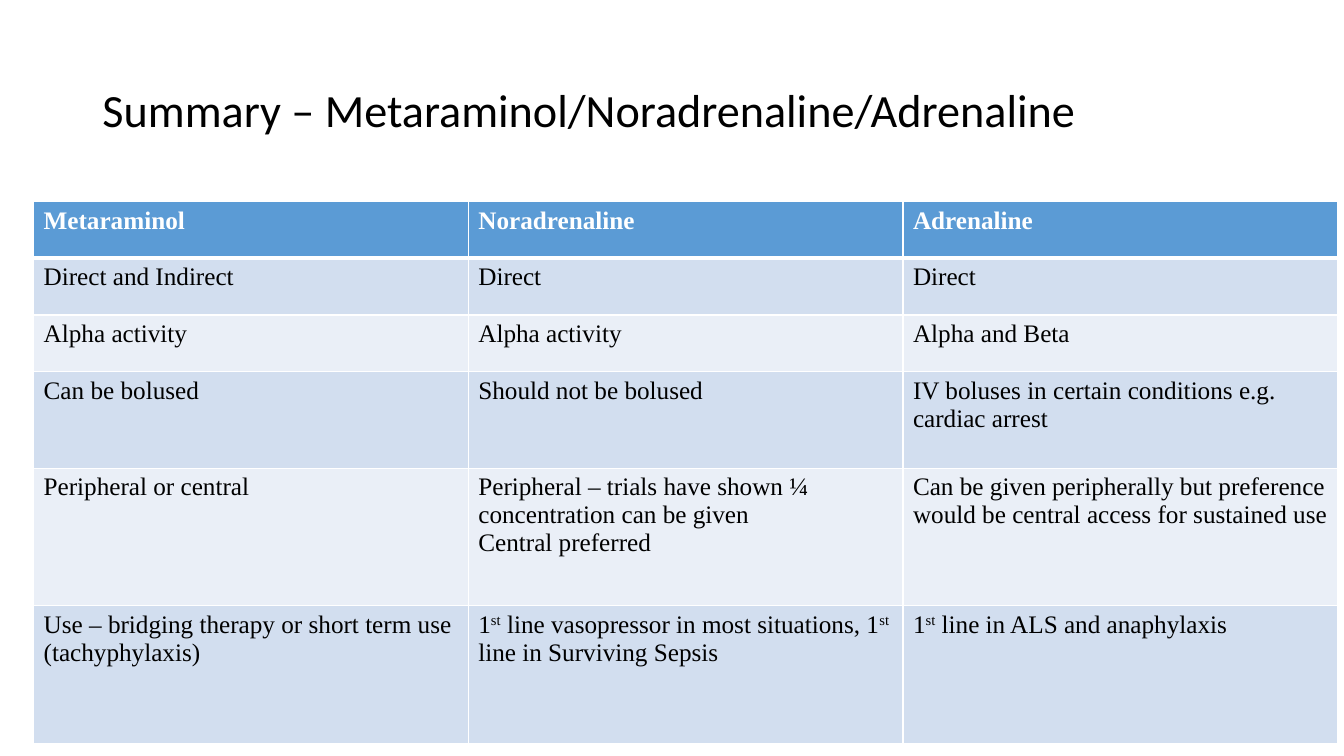
from typing import NamedTuple

from lxml import etree
from pptx import Presentation, util as u
from pptx.dml.color import RGBColor
from pptx.enum import text
from pptx.oxml import ns

PX = 9525  # EMU per px, 96 px to the inch
HUES = {"head": "5B9BD5", "dark": "D2DEEF", "light": "EAEFF7",
        "white": "FFFFFF", "black": "000000"}


class Row(NamedTuple):
    high: int
    cells: tuple[str, str, str]


# Carets enclose superscript, line breaks part paragraphs
ROWS = [
    Row(54, ("Metaraminol", "Noradrenaline", "Adrenaline")),
    Row(54, ("Direct and Indirect", "Direct", "Direct")),
    Row(54, ("Alpha activity", "Alpha activity", "Alpha and Beta")),
    Row(92, ("Can be bolused", "Should not be bolused",
             "IV boluses in certain conditions e.g. cardiac arrest")),
    Row(131, ("Peripheral or central",
              "Peripheral – trials have shown ¼ concentration can be given\n"
              "Central preferred",
              "Can be given peripherally but preference would be central "
              "access for sustained use")),
    Row(131, ("Use – bridging therapy or short term use (tachyphylaxis)",
              "1^st^ line vasopressor in most situations, 1^st^ line in "
              "Surviving Sepsis",
              "1^st^ line in ALS and anaphylaxis")),
]
COL = 414


def px(n: int) -> u.Emu:
    return u.Emu(n * PX)


def style(font, face: str, size: int, hue: str, bold: bool = False) -> None:
    font.name, font.size, font.bold = face, u.Pt(size), bold
    font.color.rgb = RGBColor.from_string(HUES[hue])


def edge(cell, side: str, wide: int) -> None:
    line = etree.SubElement(cell._tc.get_or_add_tcPr(), ns.qn(f"a:ln{side}"),
                            w=str(u.Pt(wide)))
    fill = etree.SubElement(line, ns.qn("a:solidFill"))
    etree.SubElement(fill, ns.qn("a:srgbClr"), val=HUES["white"])


def write(cell, words: str, head: bool) -> None:
    frame = cell.text_frame
    for i, line in enumerate(words.split("\n")):
        para = frame.add_paragraph() if i else frame.paragraphs[0]
        for j, part in enumerate(line.split("^")):
            run = para.add_run()
            run.text = part
            style(run.font, "Times New Roman", 18,
                  "white" if head else "black", head)
            if j % 2:
                run.font._element.set("baseline", "30000")


def draw(slide, rows: list[Row]) -> None:
    frame = slide.shapes.add_table(
        len(rows), 3, px(32), px(192), px(3 * COL),
        px(sum(row.high for row in rows)))
    grid = frame.table
    for col in grid.columns:
        col.width = px(COL)
    for r, row in enumerate(rows):
        grid.rows[r].height = px(row.high)
        hue = "head" if r == 0 else "dark" if r % 2 else "light"
        for c, words in enumerate(row.cells):
            cell = grid.cell(r, c)
            write(cell, words, r == 0)
            # A thick rule runs below the header
            for side in "LRTB":
                thick = (r, side) in ((0, "B"), (1, "T"))
                edge(cell, side, 3 if thick else 1)
            cell.fill.solid()
            cell.fill.fore_color.rgb = RGBColor.from_string(HUES[hue])


def main() -> None:
    deck = Presentation()
    deck.slide_width, deck.slide_height = px(1280), px(720)
    slide = deck.slides.add_slide(deck.slide_layouts[5])

    # Title
    title = slide.shapes.title
    title.left, title.top, title.width, title.height = map(
        px, (88, 38, 1104, 139))
    frame = title.text_frame
    frame.text = "Summary – Metaraminol/Noradrenaline/Adrenaline"
    frame.vertical_anchor = text.MSO_ANCHOR.MIDDLE
    frame.auto_size = text.MSO_AUTO_SIZE.NONE
    para = frame.paragraphs[0]
    para.alignment = text.PP_ALIGN.LEFT
    para.line_spacing = 0.9
    style(para.runs[0].font, "Calibri", 33, "black")

    # Comparison table
    draw(slide, ROWS)
    deck.save("out.pptx")


if __name__ == "__main__":
    main()
